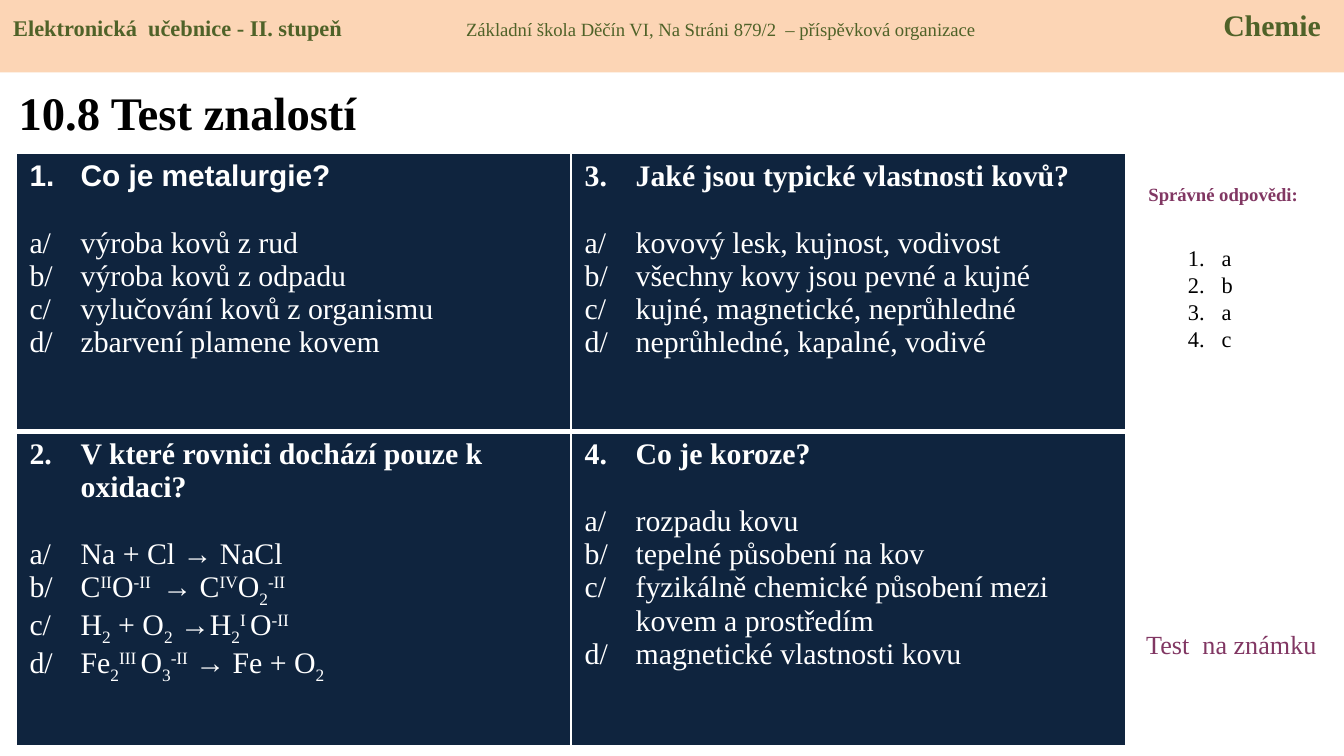
from lxml.etree import SubElement
from pptx import Presentation
from pptx.dml.color import RGBColor
from pptx.enum.shapes import MSO_SHAPE
from pptx.enum.text import MSO_ANCHOR, PP_ALIGN
from pptx.oxml.ns import qn
from pptx.util import Inches, Pt

COLORS = {"band": "FCD5B5", "header": "4F6228", "cell": "0F243E",
          "white": "FFFFFF", "black": "000000", "accent": "813763"}
SERIF, SANS = "Times New Roman", "Arial"

HEADER = [  # text, size, bold
    ("Elektronická  učebnice - II. stupeň", 12, True),
    ("\tZákladní škola Děčín VI, Na Stráni 879/2  – příspěvková organizace", 10, False),
    ("\tChemie", 16, True),
]
HEADER_TABS = [(3.37, "l"), (9.73, "r")]
TITLE = "10.8 Test znalostí"
# In the answers, "|" separates runs, "^" raises a run and "_" lowers it.
QUESTIONS = [
    ("Co je metalurgie?",
     ["a/\tvýroba kovů z rud", "b/\tvýroba kovů z odpadu",
      "c/\tvylučování kovů z organismu", "d/\tzbarvení plamene kovem"]),
    ("2.\tV které rovnici dochází pouze k oxidaci?",
     ["a/\tNa + Cl → NaCl", "b/\tC|^II|O|^-II | → C|^IV|O|_2|^-II",
      "c/\tH|_2| + O|_2| →H|_2|^I |O|^-II",
      "d/\tFe|_2|^III |O|_3|^-II| → Fe + O|_2"]),
    ("Jaké jsou typické vlastnosti kovů?",
     ["a/\tkovový lesk, kujnost, vodivost", "b/\tvšechny kovy jsou pevné a kujné",
      "c/\tkujné, magnetické, neprůhledné", "d/\tneprůhledné, kapalné, vodivé"]),
    ("Co je koroze?",
     ["a/\trozpadu kovu", "b/\ttepelné působení na kov",
      "c/\tfyzikálně chemické působení mezi", "\tkovem a prostředím",
      "d/\tmagnetické vlastnosti kovu"]),
]
SOLUTIONS = ["a", "b", "a", "c"]
COLUMN_WIDTH, ROW_HEIGHTS = 4.13, [2.07, 2.34]
BASELINES = {"^": "30000", "_": "-25000"}


def color(name):
    return RGBColor.from_string(COLORS[name])


def style(font, size, color_name, bold=False, name=SERIF):
    font.name, font.size, font.bold = name, Pt(size), bold
    font.color.rgb = color(color_name)


def hang(paragraph, indent, number=None):
    """Give a hanging indent and, if asked, an automatic number; call before style."""
    properties = paragraph._p.get_or_add_pPr()
    properties.set("marL", str(Inches(indent)))
    properties.set("indent", str(-Inches(indent)))
    if number:
        SubElement(properties, qn("a:buAutoNum"), type="arabicPeriod", startAt=str(number))


def add_frame(slide, box, anchor=MSO_ANCHOR.TOP):
    frame = slide.shapes.add_textbox(*map(Inches, box)).text_frame
    frame.word_wrap = True
    frame.vertical_anchor = anchor
    return frame


def add_line(slide, box, text, size, color_name, bold=False,
             align=PP_ALIGN.LEFT, anchor=MSO_ANCHOR.TOP):
    paragraph = add_frame(slide, box, anchor).paragraphs[0]
    paragraph.text = text
    paragraph.alignment = align
    style(paragraph.font, size, color_name, bold)


def add_header(slide):
    band = slide.shapes.add_shape(MSO_SHAPE.RECTANGLE, 0, 0, Inches(10), Inches(0.54))
    band.shadow.inherit = False
    band.fill.solid()
    band.fill.fore_color.rgb = color("band")
    band.line.fill.background()
    band.text_frame.vertical_anchor = MSO_ANCHOR.TOP
    paragraph = band.text_frame.paragraphs[0]
    paragraph.alignment = PP_ALIGN.LEFT
    tabs = SubElement(paragraph._p.get_or_add_pPr(), qn("a:tabLst"))
    for position, align in HEADER_TABS:
        SubElement(tabs, qn("a:tab"), pos=str(Inches(position)), algn=align)
    for text, size, bold in HEADER:
        run = paragraph.add_run()
        run.text = text
        style(run.font, size, "header", bold)


def add_border(cell, side, width):
    line = SubElement(cell._tc.get_or_add_tcPr(), qn(f"a:ln{side}"), w=str(Pt(width)))
    fill = SubElement(line, qn("a:solidFill"))
    SubElement(fill, qn("a:srgbClr"), val=COLORS["white"])


def fill_question(cell, number, question, answers):
    frame = cell.text_frame
    paragraph = frame.paragraphs[0]
    paragraph.text = question
    hang(paragraph, 0.38, None if "\t" in question else number)
    paragraph.space_after = Pt(18)
    style(paragraph.font, 16, "white", True, SANS if number == 1 else SERIF)
    for answer in answers:
        paragraph = frame.add_paragraph()
        hang(paragraph, 0.38)
        style(paragraph.font, 16, "white")
        for part in answer.split("|"):
            run = paragraph.add_run()
            run.text = part.lstrip("^_")
            if part[0] in BASELINES:
                run._r.get_or_add_rPr().set("baseline", BASELINES[part[0]])


def add_questions(slide):
    table = slide.shapes.add_table(
        2, 2, Inches(0.12), Inches(1.14),
        Inches(2 * COLUMN_WIDTH), Inches(sum(ROW_HEIGHTS))).table
    for row, height in zip(table.rows, ROW_HEIGHTS):
        row.height = Inches(height)
    for index, (question, answers) in enumerate(QUESTIONS):
        column, row = divmod(index, 2)
        cell = table.cell(row, column)
        for side in "LRTB":
            between_rows = (row, side) in [(0, "B"), (1, "T")]
            add_border(cell, side, 3 if between_rows else 1)
        cell.fill.solid()
        cell.fill.fore_color.rgb = color("cell")
        fill_question(cell, index + 1, question, answers)


def add_solutions(slide):
    add_line(slide, (8.39, 1.31, 1.42, 0.27), "Správné odpovědi:", 10, "accent",
             True, PP_ALIGN.CENTER)
    frame = add_frame(slide, (8.74, 1.77, 0.55, 1.11))
    for index, solution in enumerate(SOLUTIONS):
        paragraph = frame.add_paragraph() if index else frame.paragraphs[0]
        paragraph.text = solution
        hang(paragraph, 0.25, 1)
        style(paragraph.font, 12, "black")


def main():
    presentation = Presentation()
    presentation.slide_width = Inches(10)
    presentation.slide_height = Inches(10 * 9 / 16)
    slide = presentation.slides.add_slide(presentation.slide_layouts[6])
    add_line(slide, (0.04, 0.54, 3.19, 0.59), TITLE, 25, "black", True,
             anchor=MSO_ANCHOR.MIDDLE)
    add_questions(slide)
    add_solutions(slide)
    add_line(slide, (8.43, 4.63, 1.57, 0.34), "Test  na známku", 14, "accent")
    add_header(slide)
    presentation.save("out.pptx")


if __name__ == "__main__":
    main()
